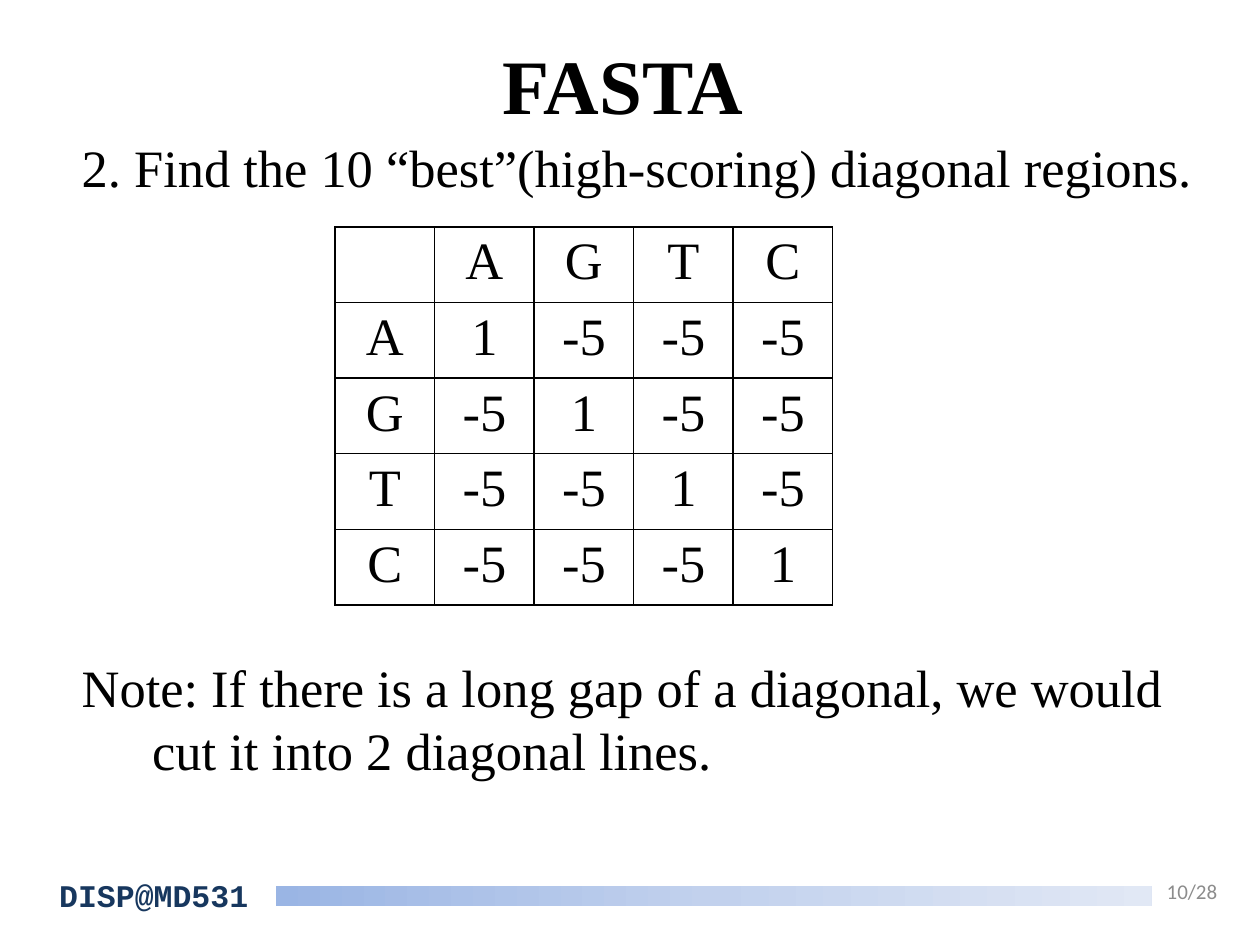
from copy import deepcopy

from lxml import etree
from pptx import Presentation
from pptx.dml.color import RGBColor
from pptx.enum.shapes import MSO_SHAPE
from pptx.enum.text import MSO_ANCHOR, PP_ALIGN
from pptx.oxml.ns import qn
from pptx.util import Inches, Pt

LEFT, CENTER, RIGHT = PP_ALIGN.LEFT, PP_ALIGN.CENTER, PP_ALIGN.RIGHT
TOP, MIDDLE = MSO_ANCHOR.TOP, MSO_ANCHOR.MIDDLE
RECTANGLE = MSO_SHAPE.RECTANGLE
SERIF = "Times New Roman"
BASES = "AGTC"
MATCH, MISMATCH = "1", "-5"
COL_W, ROW_H = 0.79, 0.6


def color(hex_code):
    return RGBColor.from_string(hex_code)


def inches(*lengths):
    return [Inches(v) for v in lengths]


def add_run(p, text, size, font=SERIF, hex_code="000000", bold=False, align=LEFT):
    p.alignment = align
    r = p.add_run()
    r.text = text
    r.font.size = Pt(size)
    r.font.name = font
    r.font.bold = bold
    r.font.color.rgb = color(hex_code)


def set_frame(tf, insets, anchor=TOP):
    tf.word_wrap = True
    tf.vertical_anchor = anchor
    tf.margin_left, tf.margin_top, tf.margin_right, tf.margin_bottom = inches(*insets)


def add_text_box(s, box, insets=(0.1, 0.05, 0.1, 0.05), anchor=TOP):
    tf = s.shapes.add_textbox(*inches(*box)).text_frame
    set_frame(tf, insets, anchor)
    return tf


def set_title(s, text):
    title = s.shapes.title
    title.left, title.top, title.width, title.height = inches(0.47, 0.23, 8.95, 1.48)
    set_frame(title.text_frame, (0, 0.07, 0, 0))
    add_run(title.text_frame.paragraphs[0], text, 44, bold=True, align=CENTER)


def add_body(s, step, note, gap):
    """Add two hanging paragraphs, with room for the table between them."""
    tf = add_text_box(s, (0.55, 0.39, 9.06, 6.33), (0.1, 0.68, 0.1, 0.05))
    for p, text in ((tf.paragraphs[0], step), (tf.add_paragraph(), note)):
        add_run(p, text, 30)
        p_pr = p._p.get_or_add_pPr()
        p_pr.set("marL", str(Inches(0.56)))
        p_pr.set("indent", str(Inches(-0.56)))
    p.space_before = Pt(gap)


def add_borders(cell, width=1, hex_code="000000"):
    tc_pr = cell._tc.get_or_add_tcPr()
    for i, side in enumerate(("a:lnL", "a:lnR", "a:lnT", "a:lnB")):
        ln = etree.Element(qn(side), w=str(Pt(width)))
        fill = etree.SubElement(ln, qn("a:solidFill"))
        etree.SubElement(fill, qn("a:srgbClr"), val=hex_code)
        tc_pr.insert(i, ln)


def add_score_table(s, left, top):
    rows = [["", *BASES]]
    for a in BASES:
        rows.append([a] + [MATCH if a == b else MISMATCH for b in BASES])
    n = len(rows)
    table = s.shapes.add_table(n, n, *inches(left, top, n * COL_W, n * ROW_H)).table
    table.first_row = table.horz_banding = False
    for i, row in enumerate(rows):
        table.columns[i].width = Inches(COL_W)
        table.rows[i].height = Inches(ROW_H)
        for j, text in enumerate(row):
            cell = table.cell(i, j)
            cell.fill.background()
            add_borders(cell)
            if text:
                add_run(cell.text_frame.paragraphs[0], text, 30, align=CENTER)


def add_gradient_bar(s, box, stops):
    bar = s.shapes.add_shape(RECTANGLE, *inches(*box))
    bar.shadow.inherit = False
    bar.line.fill.background()
    bar.fill.gradient()
    bar.fill.gradient_angle = 0
    gs_list = bar._element.spPr.find(".//" + qn("a:gsLst"))
    gs_list.insert(1, deepcopy(gs_list[0]))
    for stop, (position, hex_code) in zip(bar.fill.gradient_stops, stops):
        stop.position = position
        stop.color.rgb = color(hex_code)


def add_footer(s):
    add_gradient_bar(s, (2.19, 7.03, 6.95, 0.16),
                     ((0, "9AB5E4"), (0.5, "C2D1ED"), (1, "E1E8F5")))
    tf = add_text_box(s, (0.47, 6.95, 1.64, 0.31), (0, 0, 0, 0))
    add_run(tf.paragraphs[0], "DISP@MD531", 18, "Courier New", "17375E", bold=True)
    tf = add_text_box(s, (9.06, 6.88, 0.7, 0.39), anchor=MIDDLE)
    add_run(tf.paragraphs[0], "10/28", 12, "Calibri", "8C8C8C", align=RIGHT)


def main():
    prs = Presentation()
    prs.slide_width, prs.slide_height = inches(10, 7.5)
    s = prs.slides.add_slide(prs.slide_layouts[5])
    set_title(s, "FASTA")
    add_body(s, "2. Find the 10 “best”(high-scoring) diagonal regions.",
             "Note: If there is a long gap of a diagonal, we would "
             "cut it into 2 diagonal lines.", gap=261)
    add_score_table(s, 2.66, 1.8)
    add_footer(s)
    prs.save("out.pptx")


if __name__ == "__main__":
    main()
